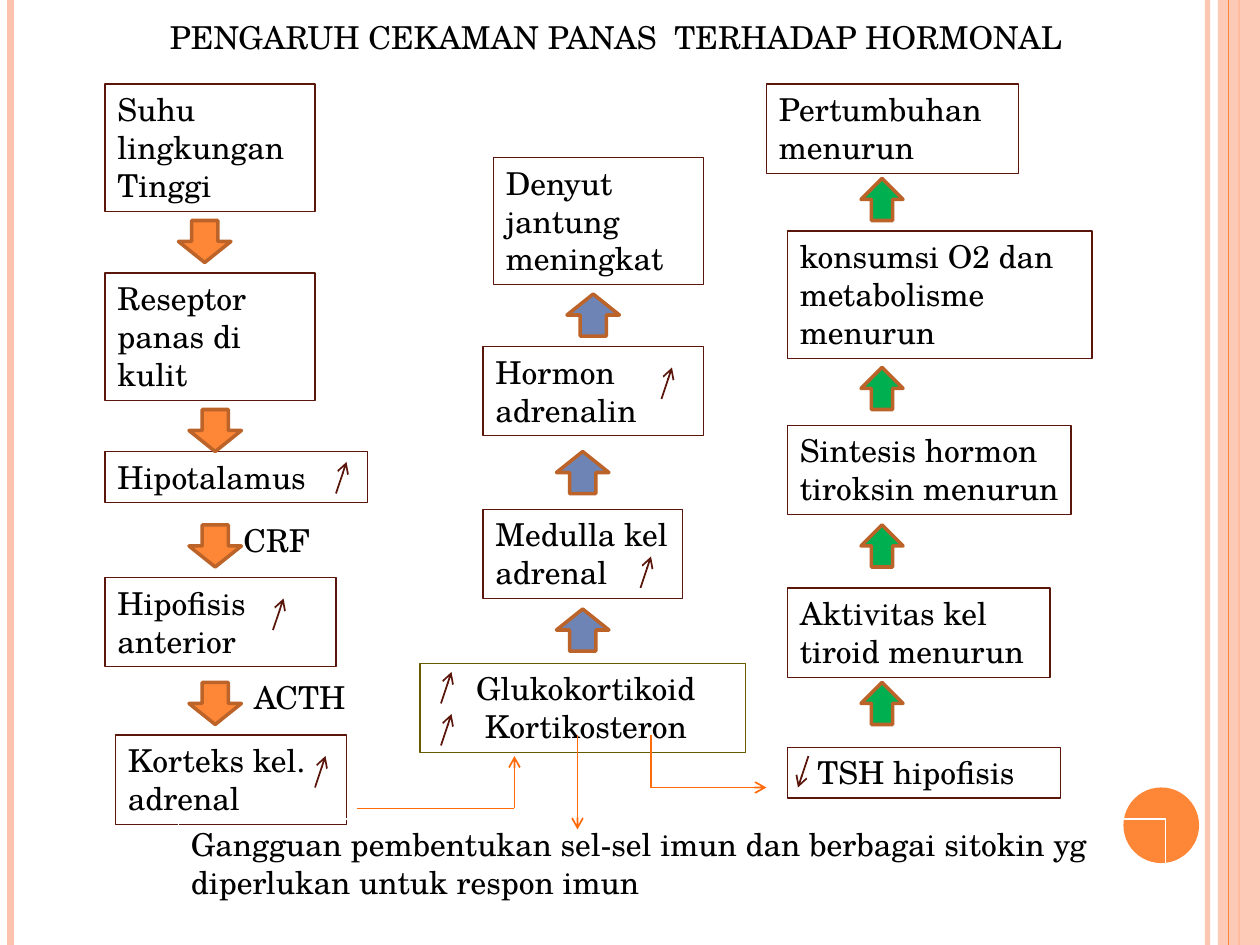
from lxml import etree
from pptx import Presentation
from pptx.dml.color import RGBColor
from pptx.enum.shapes import MSO_CONNECTOR, MSO_SHAPE
from pptx.enum.text import MSO_ANCHOR, MSO_AUTO_SIZE, PP_ALIGN
from pptx.oxml.ns import qn
from pptx.util import Pt

STRAIGHT = MSO_CONNECTOR.STRAIGHT
RECTANGLE, OVAL = MSO_SHAPE.RECTANGLE, MSO_SHAPE.OVAL
DOWN_ARROW, UP_ARROW = MSO_SHAPE.DOWN_ARROW, MSO_SHAPE.UP_ARROW
TOP, LEFT = MSO_ANCHOR.TOP, PP_ALIGN.LEFT
FIT_SHAPE = MSO_AUTO_SIZE.SHAPE_TO_FIT_TEXT

BLACK = RGBColor(0x00, 0x00, 0x00)
WHITE = RGBColor(0xFF, 0xFF, 0xFF)
PEACH = RGBColor(0xFE, 0xC3, 0xAE)
ORANGE = RGBColor(0xFE, 0x86, 0x37)
BRIGHT_ORANGE = RGBColor(0xFF, 0x6B, 0x0A)
RUST = RGBColor(0xBC, 0x63, 0x29)
MAROON = RGBColor(0x5A, 0x16, 0x0B)
OLIVE = RGBColor(0x67, 0x5A, 0x00)
BLUE = RGBColor(0x6E, 0x84, 0xB4)
GREEN = RGBColor(0x00, 0xB0, 0x50)

FONT = "TeX Gyre Schola"
SLIDE_HEIGHT = 540
BOX_HEIGHTS = {1: 29, 2: 51, 3: 72.7}  # by number of text lines

# text, left, top, width, number of lines
STEPS = [
    ("Suhu lingkungan Tinggi", 60, 48, 120, 3),
    ("Reseptor panas di kulit", 60, 156, 120, 3),
    ("Hipotalamus", 60, 258, 150, 1),
    ("Hipofisis anterior", 60, 330, 132, 2),
    ("Korteks kel. adrenal", 66, 420, 132, 2),
    ("Medulla kel adrenal", 276, 291, 114, 2),
    ("Hormon adrenalin", 276, 198, 126, 2),
    ("Denyut jantung meningkat", 282, 90, 120, 3),
    ("Aktivitas kel tiroid menurun", 450, 336, 150, 2),
    ("Sintesis hormon tiroksin menurun", 450, 243, 162, 2),
    ("konsumsi O2 dan metabolisme menurun", 450, 132, 174, 3),
    ("Pertumbuhan menurun", 438, 48, 144, 2),
]
# preset, fill, width, left and top of each arrow
BLOCK_ARROWS = [
    (DOWN_ARROW, ORANGE, 30, [(102, 126), (108, 234), (108, 300), (108, 390)]),
    (UP_ARROW, BLUE, 30, [(318, 348), (318, 258), (324, 168)]),
    (UP_ARROW, GREEN, 24, [(492, 390), (492, 300), (492, 210), (492, 102)]),
]
# left and top of each small rising arrow
RISE_MARKS = [(192, 264), (156, 342), (180, 432), (252, 384), (252, 408),
              (366, 318), (378, 210)]
# corner points of each flow path
FLOWS = [
    [(204, 462), (294, 462), (294, 432)],
    [(372, 420), (372, 450), (438, 450)],
    [(330, 420), (330, 474)],
]


def set_opacity(format_element, percent):
    color = next(format_element.iter(qn("a:srgbClr")))
    etree.SubElement(color, qn("a:alpha"), val=str(percent * 1000))


def write_text(shape, text, size=18, color=BLACK, indents=(0,)):
    """Write one paragraph per line of text, each with its own left indent."""
    frame = shape.text_frame
    frame.word_wrap = True
    frame.auto_size = FIT_SHAPE
    frame.vertical_anchor = TOP
    frame.text = text
    for paragraph, indent in zip(frame.paragraphs, indents):
        paragraph.alignment = LEFT
        paragraph.font.name = FONT
        paragraph.font.size = Pt(size)
        paragraph.font.color.rgb = color
        if indent:
            paragraph._p.get_or_add_pPr().set("marL", str(Pt(indent)))


def add_preset(slide, preset, left, top, width, height,
               fill=None, line=None, line_width=0.75):
    shape = slide.shapes.add_shape(preset, Pt(left), Pt(top), Pt(width), Pt(height))
    shape.shadow.inherit = False
    if fill is None:
        shape.fill.background()
    else:
        shape.fill.solid()
        shape.fill.fore_color.rgb = fill
    if line is None:
        shape.line.fill.background()
    else:
        shape.line.color.rgb = line
        shape.line.width = Pt(line_width)
    return shape


def add_box(slide, text, left, top, width, lines, line=MAROON, **text_format):
    box = add_preset(slide, RECTANGLE, left, top, width, BOX_HEIGHTS[lines], line=line)
    write_text(box, text, **text_format)


def add_label(slide, text, left, top, width):
    label = slide.shapes.add_textbox(Pt(left), Pt(top), Pt(width), Pt(BOX_HEIGHTS[1]))
    write_text(label, text)


def add_line(slide, start, end, color, width=1, arrow=False):
    points = [Pt(value) for value in (*start, *end)]
    connector = slide.shapes.add_connector(STRAIGHT, *points)
    connector.line.color.rgb = color
    connector.line.width = Pt(width)
    if arrow:
        etree.SubElement(connector.line._get_or_add_ln(), qn("a:tailEnd"), type="arrow")
    etree.SubElement(connector._element.spPr, qn("a:effectLst"))
    return connector


def add_flow(slide, points):
    """Join the points with lines, with an arrowhead on the last one."""
    for start, end in zip(points, points[1:]):
        add_line(slide, start, end, BRIGHT_ORANGE, arrow=end == points[-1])


def add_side_decoration(slide):
    def add_rail(x, color, width):
        return add_line(slide, (x, 0), (x, SLIDE_HEIGHT), color, width)

    set_opacity(add_rail(690, PEACH, 3)._element.spPr, 93)
    add_rail(6, PEACH, 4.5)
    add_rail(708, ORANGE, 1.5)
    band = add_preset(slide, RECTANGLE, 696, 0, 24, SLIDE_HEIGHT, fill=PEACH)
    set_opacity(band._element.spPr, 87)
    add_rail(702, ORANGE, 0.75)
    add_preset(slide, OVAL, 642, 450, 43.2, 43.2, fill=ORANGE)


def main():
    presentation = Presentation()
    presentation.slide_width = Pt(720)
    presentation.slide_height = Pt(SLIDE_HEIGHT)
    slide = presentation.slides.add_slide(presentation.slide_layouts[6])

    add_side_decoration(slide)
    add_label(slide, "PENGARUH CEKAMAN PANAS  TERHADAP HORMONAL", 90, 7, 528)
    for step in STEPS:
        add_box(slide, *step)
    add_box(slide, "Glukokortikoid\nKortikosteron", 240, 379, 186, 2,
            line=OLIVE, indents=(25, 30))
    add_box(slide, "TSH hipofisis", 450, 427, 156, 1, indents=(10,))
    add_box(slide, "Gangguan pembentukan sel-sel imun dan berbagai sitokin yg "
            "diperlukan untuk respon imun", 102, 468, 564, 2, line=WHITE)

    for preset, fill, width, places in BLOCK_ARROWS:
        for left, top in places:
            add_preset(slide, preset, left, top, width, 24,
                       fill=fill, line=RUST, line_width=2)
    add_label(slide, "CRF", 132, 294, 54)
    add_label(slide, "ACTH", 138, 384, 78)

    for left, top in RISE_MARKS:
        add_line(slide, (left, top + 18), (left + 6, top), MAROON, arrow=True)
    add_line(slide, (462, 432), (456, 450), MAROON, arrow=True)
    for points in FLOWS:
        add_flow(slide, points)

    presentation.save("out.pptx")


if __name__ == "__main__":
    main()
